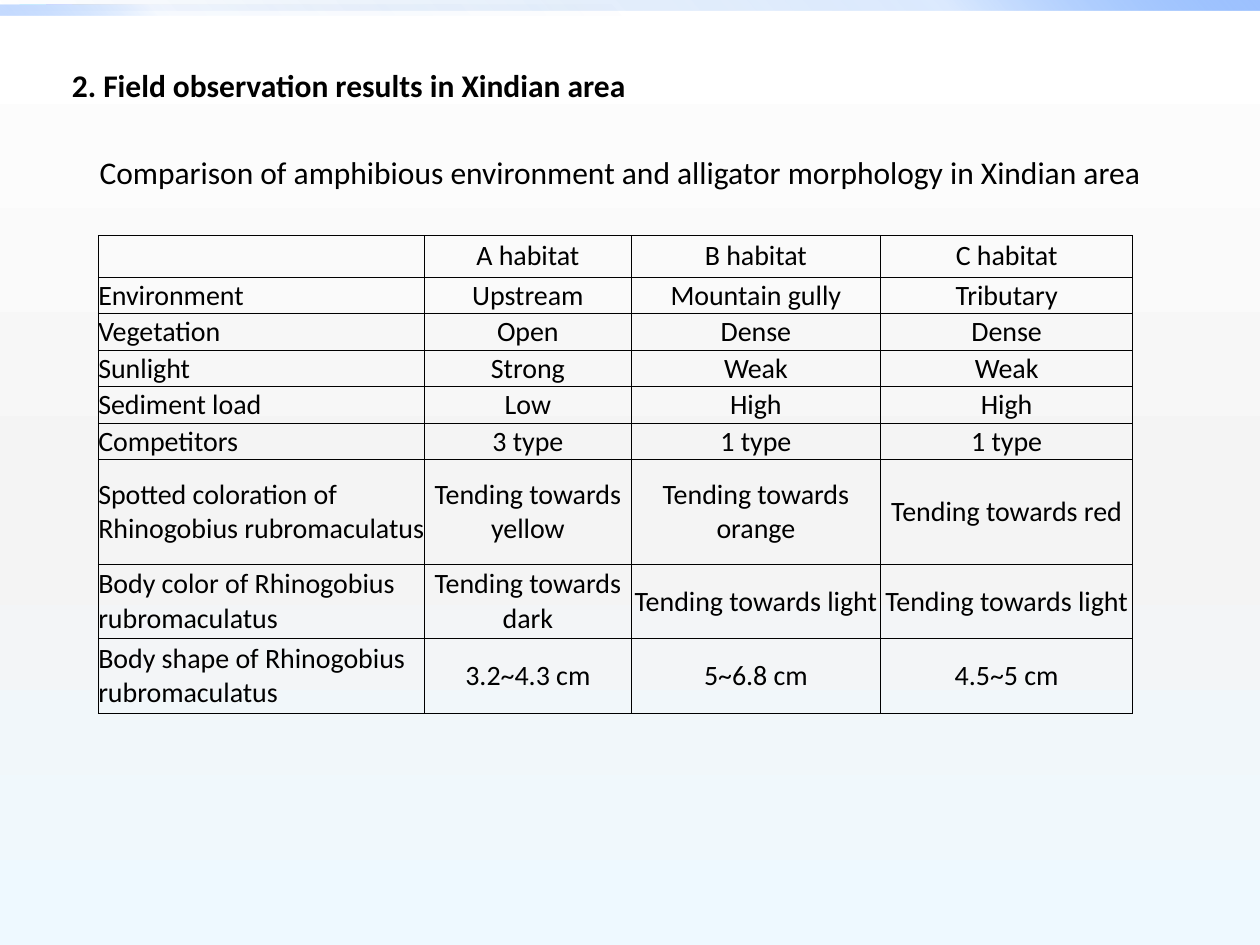
from lxml import etree
from pptx import Presentation
from pptx.dml.color import RGBColor
from pptx.enum.shapes import MSO_SHAPE
from pptx.enum.text import MSO_ANCHOR, PP_ALIGN
from pptx.oxml.ns import qn
from pptx.util import Inches, Pt

RECT = MSO_SHAPE.RECTANGLE
MIDDLE = MSO_ANCHOR.MIDDLE
LEFT, CENTER = PP_ALIGN.LEFT, PP_ALIGN.CENTER

BLACK = "000000"

# Gradient stops: position %, colour, opacity %
BACKGROUND = [(0, "FFFFFF", 100), (55, "F4F4F4", 100), (100, "EEF9FF", 100)]
BARS = [
    ((0, 0, 10, 0.08), [(0, "0058B7", 0), (75, "4F95FF", 20), (100, "9EC2FF", 100)], 315),
    ((0, 0.04, 5, 0.08), [(0, "0058B7", 0), (75, "4F95FF", 5), (100, "9EC2FF", 60)], 135),
]

# Text, bold, left indent (inches), space before (points)
BODY_BOX = (0.47, 0.47, 9, 4.95)
BODY = [
    ("2. Field observation results in Xindian area", True, 0, 0),
    ("Comparison of amphibious environment and alligator morphology in Xindian area",
     False, 0.22, 28.5),
]

TABLE_AT = (0.78, 1.87)
COLUMNS = [2.59, 1.64, 1.98, 2]
ROWS = [
    (0.33, ["", "A habitat", "B habitat", "C habitat"]),
    (0.29, ["Environment", "Upstream", "Mountain gully", "Tributary"]),
    (0.29, ["Vegetation", "Open", "Dense", "Dense"]),
    (0.29, ["Sunlight", "Strong", "Weak", "Weak"]),
    (0.29, ["Sediment load", "Low", "High", "High"]),
    (0.29, ["Competitors", "3 type", "1 type", "1 type"]),
    (0.83, ["Spotted coloration of Rhinogobius rubromaculatus", "Tending towards yellow",
            "Tending towards orange", "Tending towards red"]),
    (0.59, ["Body color of Rhinogobius rubromaculatus", "Tending towards dark",
            "Tending towards light", "Tending towards light"]),
    (0.59, ["Body shape of Rhinogobius rubromaculatus", "3.2~4.3 cm", "5~6.8 cm", "4.5~5 cm"]),
]


def color(value):
    return RGBColor.from_string(value)


def inches(values):
    return [Inches(v) for v in values]


def set_font(font, size, bold=False):
    for name, value in {"name": "Calibri", "size": Pt(size), "bold": bold}.items():
        setattr(font, name, value)
    font.color.rgb = color(BLACK)


def set_gradient(fill, parent, stops, angle):
    """Fill parent with a linear gradient, its angle in clockwise degrees."""
    fill.gradient()
    grad = parent.find(qn("a:gradFill"))
    for child in list(grad):
        grad.remove(child)
    stop_list = etree.SubElement(grad, qn("a:gsLst"))
    for position, value, opacity in stops:
        stop = etree.SubElement(stop_list, qn("a:gs"), pos=str(position * 1000))
        clr = etree.SubElement(stop, qn("a:srgbClr"), val=value)
        if opacity < 100:
            etree.SubElement(clr, qn("a:alpha"), val=str(opacity * 1000))
    etree.SubElement(grad, qn("a:lin"), ang=str(angle * 60000), scaled="0")


def set_borders(cell, width=0.5):
    tc_pr = cell._tc.get_or_add_tcPr()
    for side in ("lnL", "lnR", "lnT", "lnB"):
        line = etree.SubElement(tc_pr, qn(f"a:{side}"), w=str(Pt(width)))
        solid = etree.SubElement(line, qn("a:solidFill"))
        etree.SubElement(solid, qn("a:srgbClr"), val=BLACK)


def add_bar(slide, box, stops, angle):
    sp = slide.shapes.add_shape(RECT, *inches(box))
    sp.shadow.inherit = False
    sp.line.fill.background()
    set_gradient(sp.fill, sp._element.spPr, stops, angle)


def fill_body(sp):
    sp.left, sp.top, sp.width, sp.height = inches(BODY_BOX)
    tf = sp.text_frame
    for i, (text, bold, indent, before) in enumerate(BODY):
        p = tf.paragraphs[0] if i == 0 else tf.add_paragraph()
        p_pr = p._p.get_or_add_pPr()
        p_pr.set("marL", str(Inches(indent)))
        p_pr.set("indent", "0")
        etree.SubElement(p_pr, qn("a:buNone"))
        p.space_before = Pt(before)
        r = p.add_run()
        r.text = text
        set_font(r.font, 18, bold)


def add_habitat_table(slide):
    heights = [height for height, _ in ROWS]
    frame = slide.shapes.add_table(len(ROWS), len(COLUMNS), *inches(TABLE_AT),
                                   *inches((sum(COLUMNS), sum(heights))))
    table = frame.table
    table.first_row = table.horz_banding = False
    for column, width in zip(table.columns, COLUMNS):
        column.width = Inches(width)
    for row, (height, texts) in zip(table.rows, ROWS):
        row.height = Inches(height)
        for i, (cell, text) in enumerate(zip(row.cells, texts)):
            set_borders(cell)
            cell.fill.background()
            cell.vertical_anchor = MIDDLE
            for side in ("left", "right", "top", "bottom"):
                setattr(cell, f"margin_{side}", 0)
            cell.text = text
            p = cell.text_frame.paragraphs[0]
            p.alignment = CENTER if i else LEFT
            set_font(p.runs[0].font if p.runs else p.font, 16)


def main():
    prs = Presentation()
    prs.slide_width, prs.slide_height = inches((10, 7.5))
    slide = prs.slides.add_slide(prs.slide_layouts[1])
    title = slide.shapes.title._element
    title.getparent().remove(title)

    fill = slide.background.fill
    set_gradient(fill, slide._element.find(".//" + qn("p:bgPr")), BACKGROUND, 90)
    for bar in BARS:
        add_bar(slide, *bar)
    fill_body(slide.placeholders[1])
    add_habitat_table(slide)
    prs.save("out.pptx")


if __name__ == "__main__":
    main()
